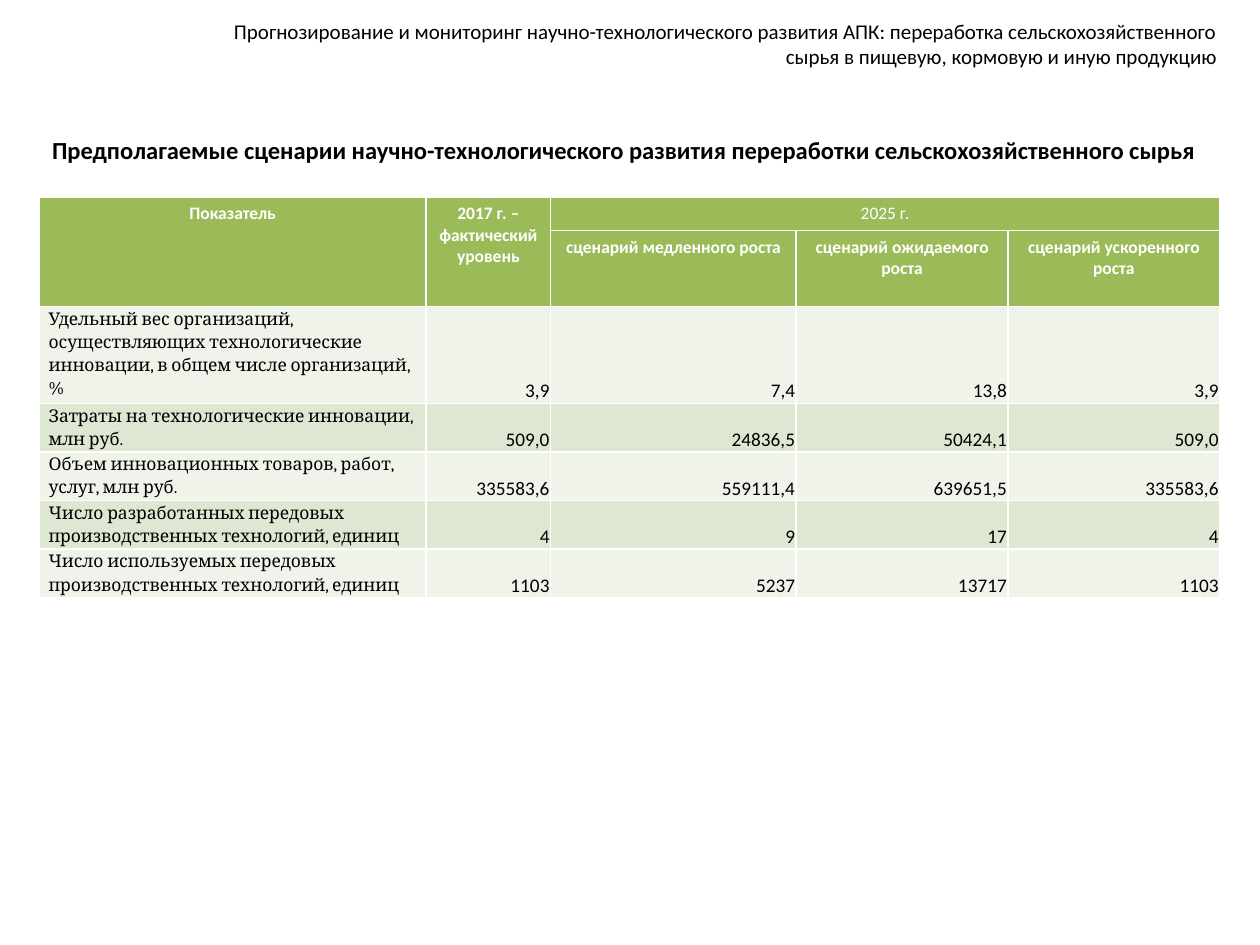
from lxml import etree
from pptx import Presentation
from pptx.dml.color import RGBColor
from pptx.enum.text import MSO_ANCHOR, MSO_AUTO_SIZE, PP_ALIGN
from pptx.oxml.ns import qn
from pptx.util import Cm, Pt

LEFT, CENTER, RIGHT = PP_ALIGN.LEFT, PP_ALIGN.CENTER, PP_ALIGN.RIGHT
BOTTOM = MSO_ANCHOR.BOTTOM
FIT_SHAPE = MSO_AUTO_SIZE.SHAPE_TO_FIT_TEXT

BLACK = RGBColor(0x00, 0x00, 0x00)
WHITE = RGBColor(0xFF, 0xFF, 0xFF)
GREEN = RGBColor(0x9B, 0xBB, 0x59)
PALE_BANDS = (RGBColor(0xEF, 0xF3, 0xEA), RGBColor(0xDE, 0xE7, 0xD1))

COLUMN_WIDTHS = (7.8, 2.51, 4.95, 4.27, 4.27)
ROW_HEIGHTS = (0.66, 1.53, 1.95, 0.98, 0.98, 0.98, 0.98)

HEADERS = (
    (0, 0, "Показатель", True),
    (0, 1, "2017 г. –\nфактический уровень", True),
    (0, 2, "2025 г.", False),
    (1, 2, "сценарий медленного роста", True),
    (1, 3, "сценарий ожидаемого роста", True),
    (1, 4, "сценарий ускоренного роста", True),
)
INDICATORS = (
    ("Удельный вес организаций, осуществляющих технологические инновации, "
     "в общем числе организаций, %", "3,9", "7,4", "13,8", "3,9"),
    ("Затраты на технологические инновации, млн руб.",
     "509,0", "24836,5", "50424,1", "509,0"),
    ("Объем инновационных товаров, работ, услуг, млн руб.",
     "335583,6", "559111,4", "639651,5", "335583,6"),
    ("Число разработанных передовых производственных технологий, единиц",
     "4", "9", "17", "4"),
    ("Число используемых передовых производственных технологий, единиц",
     "1103", "5237", "13717", "1103"),
)


def write_text(frame, text, size, color=BLACK, bold=False, align=LEFT,
               font="Calibri", line_spacing=None, space_after=None):
    """Fill a text frame, with one paragraph for each line of the text."""
    frame.word_wrap = True
    frame.text = text
    for para in frame.paragraphs:
        para.alignment = align
        para.line_spacing = line_spacing
        para.space_after = space_after
        for span in para.runs:
            span.font.name = font
            span.font.size = Pt(size)
            span.font.bold = bold
            span.font.color.rgb = color


def style_cell(cell, fill):
    """Give a cell its fill and white borders on all four sides."""
    cell.fill.solid()
    cell.fill.fore_color.rgb = fill
    properties = cell._tc.get_or_add_tcPr()
    for position, side in enumerate(("a:lnL", "a:lnR", "a:lnT", "a:lnB")):
        border = etree.Element(qn(side), w=str(Pt(1)))
        paint = etree.SubElement(border, qn("a:solidFill"))
        etree.SubElement(paint, qn("a:srgbClr"), val=str(WHITE))
        properties.insert(position, border)


deck = Presentation()
deck.slide_width, deck.slide_height = Cm(25.4), Cm(19.05)
page = deck.slides.add_slide(deck.slide_layouts[6])

topic_box = page.shapes.add_textbox(Cm(4.29), Cm(0.25), Cm(20.5), Cm(1.27))
write_text(topic_box.text_frame,
           "Прогнозирование и мониторинг научно-технологического развития АПК: "
           "переработка сельскохозяйственного сырья в пищевую, кормовую "
           "и иную продукцию", 12, align=RIGHT)
topic_box.text_frame.auto_size = FIT_SHAPE

title_box = page.shapes.add_textbox(Cm(0.58), Cm(2.59), Cm(24), Cm(1.45))
write_text(title_box.text_frame,
           "Предполагаемые сценарии научно-технологического развития "
           "переработки сельскохозяйственного сырья",
           14, bold=True, align=CENTER)
title_box.text_frame.auto_size = FIT_SHAPE

table = page.shapes.add_table(
    len(ROW_HEIGHTS), len(COLUMN_WIDTHS), Cm(0.79), Cm(3.97),
    Cm(sum(COLUMN_WIDTHS)), Cm(sum(ROW_HEIGHTS))).table
for column, width in zip(table.columns, COLUMN_WIDTHS):
    column.width = Cm(width)
for row, height in zip(table.rows, ROW_HEIGHTS):
    row.height = Cm(height)

for row_index, row in enumerate(table.rows):
    for cell in row.cells:
        style_cell(cell, GREEN if row_index < 2 else PALE_BANDS[row_index % 2])

for column_index in (0, 1):
    table.cell(0, column_index).merge(table.cell(1, column_index))
table.cell(0, 2).merge(table.cell(0, 4))
for row_index, column_index, text, bold in HEADERS:
    write_text(table.cell(row_index, column_index).text_frame, text, 10,
               color=WHITE, bold=bold, align=CENTER)

for row_index, (indicator, *values) in enumerate(INDICATORS, start=2):
    name_cell = table.cell(row_index, 0)
    name_cell.margin_left = name_cell.margin_right = Cm(0.19)
    name_cell.margin_top = name_cell.margin_bottom = 0
    write_text(name_cell.text_frame, indicator, 10, font="Cambria",
               line_spacing=1.15, space_after=Pt(10))
    for column_index, value in enumerate(values, start=1):
        cell = table.cell(row_index, column_index)
        cell.vertical_anchor = BOTTOM
        cell.margin_left = cell.margin_right = cell.margin_top = Cm(0.02)
        cell.margin_bottom = 0
        write_text(cell.text_frame, value, 11, align=RIGHT)

deck.save("out.pptx")
